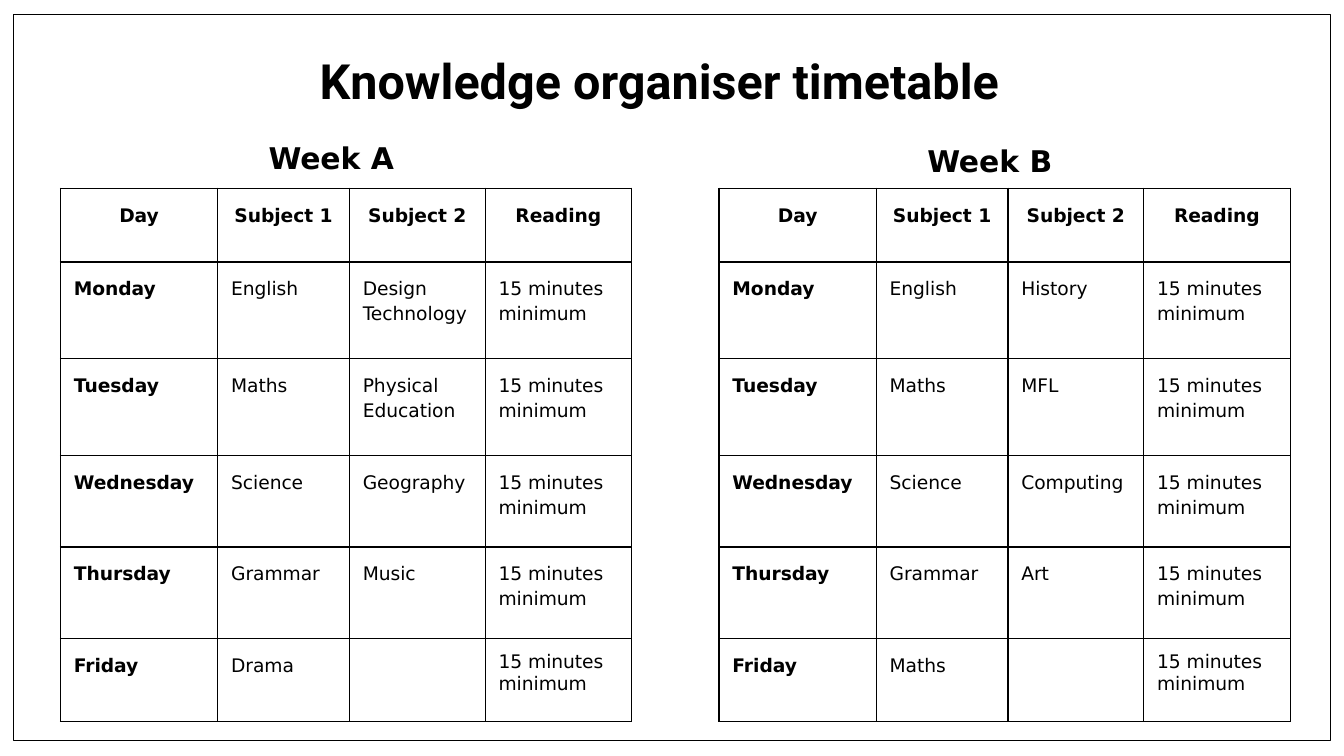
from lxml.etree import SubElement
from pptx import Presentation
from pptx.dml.color import RGBColor
from pptx.enum.shapes import MSO_SHAPE
from pptx.enum.text import MSO_ANCHOR as Anchor, MSO_AUTO_SIZE as AutoSize, PP_ALIGN as Align
from pptx.oxml.ns import qn
from pptx.util import Emu, Pt

PX_PER_INCH = 200
BLACK = "000000"
BODY_FONT = "DejaVu Sans"
TITLE_FONT = "Roboto"
BORDER_PT = 0.75
LINE_SPACING = 1.15

COLUMN_WIDTHS = [234, 196, 202, 218]
ROW_HEIGHTS = [110, 144, 144, 136, 136, 124]
HEADINGS = ["Day", "Subject 1", "Subject 2", "Reading"]
DAYS = ["Monday", "Tuesday", "Wednesday", "Thursday", "Friday"]
READING = "15 minutes\nminimum"

WEEKS = [
    {
        "name": "Week A",
        "label_box": (236, 198, 514, 74),
        "table_box": (90, 280, 850, 794),
        "first": ["English", "Maths", "Science", "Grammar", "Drama"],
        "second": ["Design Technology", "Physical Education", "Geography", "Music", ""],
    },
    {
        "name": "Week B",
        "label_box": (1216, 202, 514, 74),
        "table_box": (1070, 280, 850, 794),
        "first": ["English", "Maths", "Science", "Grammar", "Maths"],
        "second": ["History", "MFL", "Computing", "Art", ""],
    },
]


def px(length):
    """Turn px into EMU."""
    return Emu(length * 914400 // PX_PER_INCH)


def colour(value):
    """Turn a hex string into a colour."""
    return RGBColor.from_string(value)


def write(frame, text, size=10, font=BODY_FONT, bold=False, align=Align.LEFT, spacing=LINE_SPACING):
    """Put one formatted paragraph into a text frame."""
    frame.word_wrap = True
    paragraph = frame.paragraphs[0]
    paragraph.text = text
    paragraph.alignment = align
    paragraph.line_spacing = spacing
    for run in paragraph.runs:
        run.font.size = Pt(size)
        run.font.name = font
        run.font.bold = bold
        run.font.color.rgb = colour(BLACK)


def set_margins(holder, left, top, right, bottom):
    """Set the inner margins of a text frame or table cell."""
    holder.margin_left, holder.margin_top = px(left), px(top)
    holder.margin_right, holder.margin_bottom = px(right), px(bottom)


def outline_cell(cell):
    """Give a cell thin black borders and no fill."""
    properties = cell._tc.get_or_add_tcPr()
    for side in ("a:lnL", "a:lnR", "a:lnT", "a:lnB"):
        border = SubElement(properties, qn(side), w=str(Pt(BORDER_PT)))
        SubElement(SubElement(border, qn("a:solidFill")), qn("a:srgbClr"), val=BLACK)
    cell.fill.background()


def add_frame(slide, box):
    """Draw the thin frame around the slide."""
    frame = slide.shapes.add_shape(MSO_SHAPE.RECTANGLE, *map(px, box))
    frame.shadow.inherit = False
    frame.fill.background()
    frame.line.color.rgb = colour(BLACK)
    frame.line.width = Pt(BORDER_PT)


def place_title(slide, box, text):
    """Move and format the title placeholder."""
    title = slide.shapes.title
    title.left, title.top, title.width, title.height = map(px, box)
    frame = title.text_frame
    frame.auto_size = AutoSize.NONE
    frame.vertical_anchor = Anchor.MIDDLE
    set_margins(frame, 20, 20, 56, 20)
    write(frame, text, size=26, font=TITLE_FONT, bold=True, align=Align.CENTER)


def add_week_label(slide, box, name):
    """Write the heading above a week's table."""
    frame = slide.shapes.add_textbox(*map(px, box)).text_frame
    set_margins(frame, 20, 10, 20, 10)
    write(frame, name, size=16, bold=True, align=Align.CENTER, spacing=1.0)
    frame.auto_size = AutoSize.SHAPE_TO_FIT_TEXT


def add_timetable(slide, box, first, second):
    """Build the table of one week's subjects."""
    rows = [HEADINGS]
    rows += [[day, *subjects, READING] for day, *subjects in zip(DAYS, first, second)]
    table = slide.shapes.add_table(len(rows), len(HEADINGS), *map(px, box)).table
    table.first_row = table.horz_banding = False
    for column, width in zip(table.columns, COLUMN_WIDTHS):
        column.width = px(width)
    for row, height in zip(table.rows, ROW_HEIGHTS):
        row.height = px(height)
    for r, entries in enumerate(rows):
        for c, entry in enumerate(entries):
            cell = table.cell(r, c)
            set_margins(cell, 20, 20, 20, 20)
            outline_cell(cell)
            is_last = r == len(rows) - 1 and c == len(HEADINGS) - 1
            write(
                cell.text_frame,
                entry,
                bold=r == 0 or c == 0,
                align=Align.CENTER if r == 0 else Align.LEFT,
                spacing=1.0 if is_last else LINE_SPACING,
            )


def main():
    """Build and save the timetable slide."""
    deck = Presentation()
    deck.slide_width, deck.slide_height = px(2000), px(1125)
    slide = deck.slides.add_slide(deck.slide_layouts[5])
    add_frame(slide, (20, 22, 1960, 1080))
    place_title(slide, (420, 50, 1160, 124), "Knowledge organiser timetable")
    for week in WEEKS:
        add_timetable(slide, week["table_box"], week["first"], week["second"])
        add_week_label(slide, week["label_box"], week["name"])
    deck.save("out.pptx")


if __name__ == "__main__":
    main()
